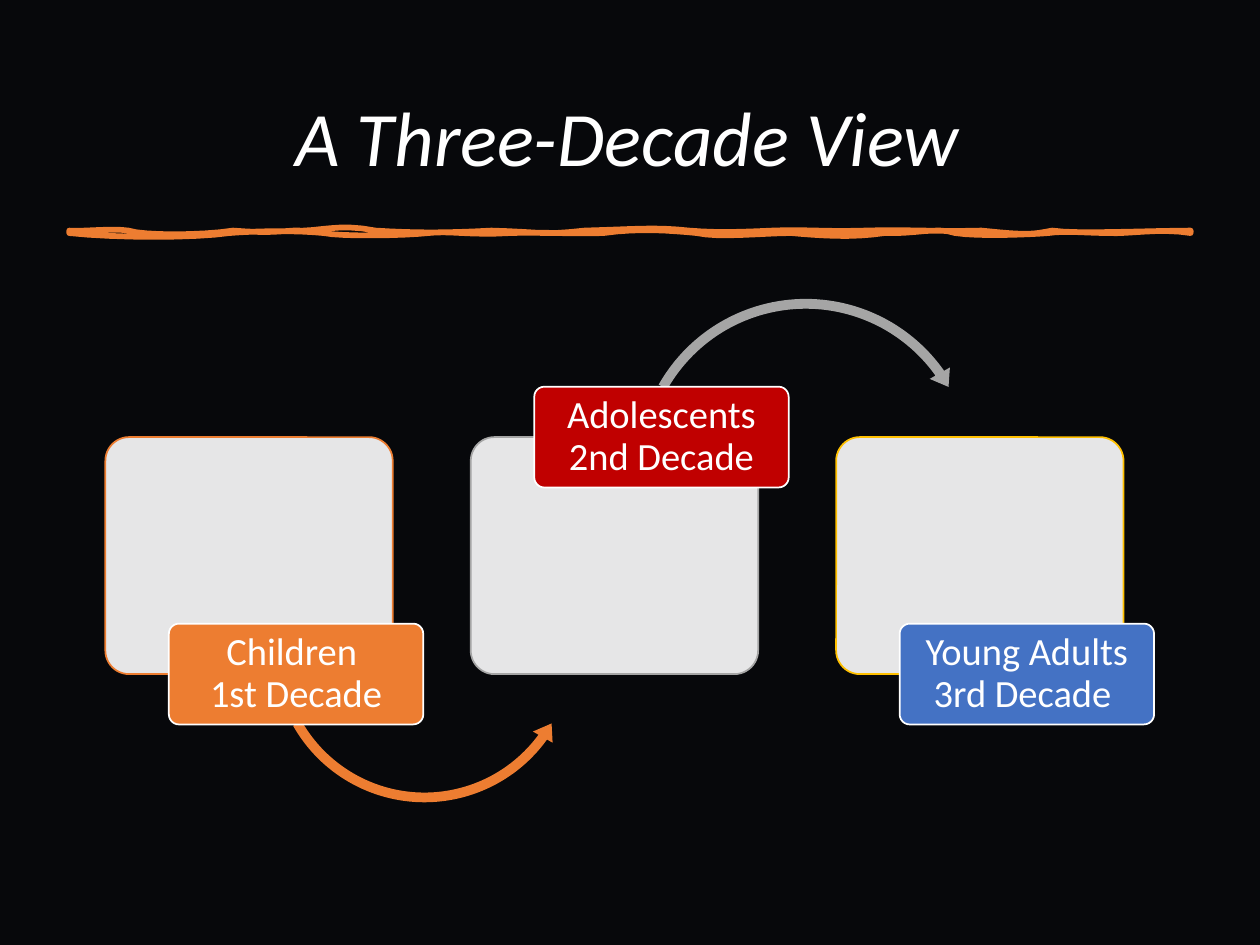
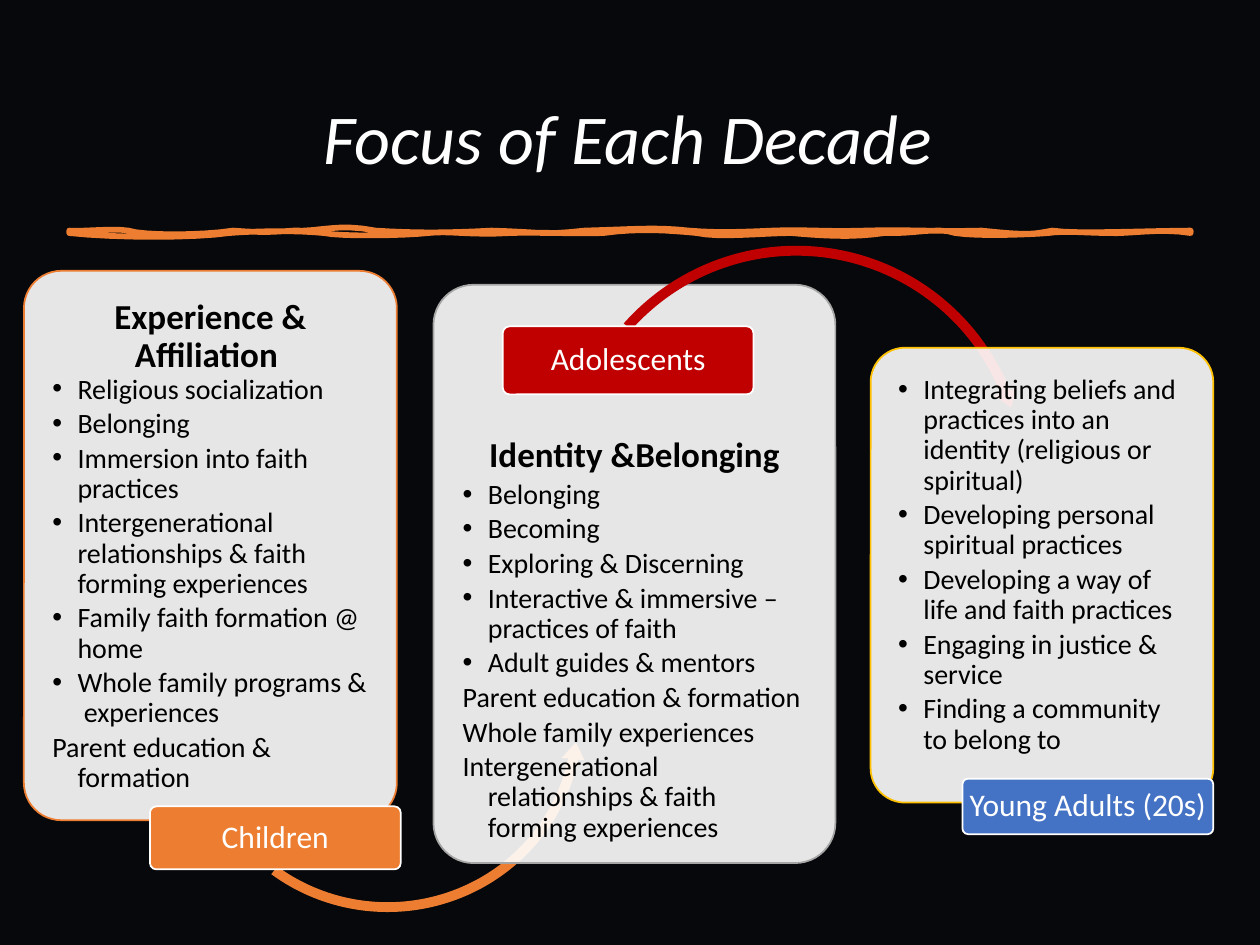
from lxml import etree
from pptx import Presentation
from pptx.dml.color import RGBColor
from pptx.enum.shapes import MSO_SHAPE
from pptx.enum.text import MSO_ANCHOR, PP_ALIGN
from pptx.oxml.ns import qn
from pptx.util import Pt

ROUNDED = MSO_SHAPE.ROUNDED_RECTANGLE
ARROW_OVER = MSO_SHAPE.CIRCULAR_ARROW
ARROW_UNDER = MSO_SHAPE.LEFT_CIRCULAR_ARROW
LEFT, CENTER = PP_ALIGN.LEFT, PP_ALIGN.CENTER
TOP, MIDDLE = MSO_ANCHOR.TOP, MSO_ANCHOR.MIDDLE

NIGHT, WHITE, BLACK = "07080B", "FFFFFF", "000000"
ORANGE, GRAY, YELLOW = "ED7D31", "A5A5A5", "FFC000"
RED, BLUE = "C00000", "4472C4"

# Hand-drawn rule: each curve is control x, y, control x, y, end x
RULE_LEFT, RULE_TOP, RULE_BOTTOM = 39.6, 131.8, 133.2
UPPER_EDGE = [
    (46, 132.5, 64, 130.3, 73.4), (82, 134.6, 115, 134.6, 133.2),
    (153.4, 133.2, 155.5, 132.5, 167.8), (183, 132.5, 193, 127.4, 214.6),
    (238.3, 133.2, 253.4, 133.2, 280.8), (310.3, 132.5, 308.2, 134.6, 334.1),
    (362.2, 131, 374.4, 129.6, 393.8), (412.6, 133.2, 423.4, 132.5, 441.4),
    (461.5, 131, 468.7, 132.5, 494.6), (519.1, 131, 533.5, 132.5, 560.9),
    (588.2, 134.6, 589.7, 133.9, 601.2), (615.6, 133.9, 657.4, 131.8, 680.4),
]
LOWER_EDGE = [
    (680.4, 132.5, 680.4, 133.2, 680.4),
    (662.4, 130.3, 644.4, 133.9, 633.6), (621.4, 133.2, 608.4, 131.8, 599),
    (591.8, 133.9, 559.4, 135.4, 545.8), (535, 129.6, 523.4, 133.9, 505.4),
    (486.7, 136.1, 468, 134.6, 452.2), (437, 133.2, 410.4, 136.1, 398.2),
    (383, 131.8, 365.8, 130.3, 344.9), (324, 133.9, 313.2, 132.5, 291.6),
    (269.3, 134.6, 256.3, 131.8, 244.8), (232.6, 134.6, 195.1, 135.4, 185),
    (171.4, 131.8, 148.3, 131.8, 131), (112.3, 136.1, 65.5, 136.1, 39.6),
]


def color(hex_string):
    return RGBColor.from_string(hex_string)


def rule_points(steps=8):
    """Sample the curves of the rule, along the top and back below."""
    points = []
    x, y = RULE_LEFT, RULE_TOP
    for curves, end_y in ((UPPER_EDGE, RULE_TOP), (LOWER_EDGE, RULE_BOTTOM)):
        for x1, y1, x2, y2, end_x in curves:
            for step in range(1, steps + 1):
                t = step / steps
                weights = ((1 - t) ** 3, 3 * t * (1 - t) ** 2,
                           3 * t * t * (1 - t), t ** 3)
                points.append(tuple(
                    Pt(sum(w * v for w, v in zip(weights, values)))
                    for values in ((x, x1, x2, end_x), (y, y1, y2, end_y))))
            x, y = end_x, end_y
    return points


class Deck:
    font = "Calibri"

    def __init__(self):
        self.presentation = Presentation()
        self.presentation.slide_width = Pt(720)
        self.presentation.slide_height = Pt(540)
        self.slide = None

    def new_slide(self, title, size):
        self.slide = self.presentation.slides.add_slide(
            self.presentation.slide_layouts[6])
        background = self.slide.background.fill
        background.solid()
        background.fore_color.rgb = color(NIGHT)
        box = self.slide.shapes.add_textbox(Pt(23.8), Pt(28.8), Pt(669.6), Pt(104.4))
        self.frame(box, MIDDLE, (7.2, 3.6, 7.2, 3.6))
        self.paragraph(box.text_frame.paragraphs[0], title, size, WHITE, italic=True)
        self.rule()

    def frame(self, shape, anchor, insets):
        frame = shape.text_frame
        frame.word_wrap = True
        frame.vertical_anchor = anchor
        (frame.margin_left, frame.margin_top,
         frame.margin_right, frame.margin_bottom) = map(Pt, insets)

    def paragraph(self, paragraph, text, size, ink, align=CENTER, after=0,
                  bold=False, italic=False):
        paragraph.text = text
        paragraph.alignment = align
        paragraph.line_spacing = 0.9
        paragraph.space_after = Pt(after)
        for run in paragraph.runs:
            run.font.name, run.font.size = self.font, Pt(size)
            run.font.bold, run.font.italic = bold, italic
            run.font.color.rgb = color(ink)

    def hang(self, paragraph, bullet):
        properties = paragraph._p.get_or_add_pPr()
        properties.set("marL", str(Pt(14.4)))
        properties.set("indent", str(-Pt(14.4)))
        if bullet:
            etree.SubElement(properties, qn("a:buFont"), typeface="Arial")
            etree.SubElement(properties, qn("a:buChar"), char="•")
        else:
            etree.SubElement(properties, qn("a:buNone"))

    def rule(self):
        builder = self.slide.shapes.build_freeform(Pt(RULE_LEFT), Pt(RULE_TOP))
        builder.add_line_segments(rule_points(), close=True)
        shape = builder.convert_to_shape()
        shape.shadow.inherit = False
        shape.fill.background()
        shape.line.color.rgb = color(ORANGE)
        shape.line.width = Pt(3.25)

    def shape(self, kind, place, fill, line, adjustments):
        shape = self.slide.shapes.add_shape(kind, *map(Pt, place))
        shape.shadow.inherit = False
        for index, value in enumerate(adjustments):
            shape.adjustments[index] = value
        shape.fill.solid()
        shape.fill.fore_color.rgb = color(fill)
        if line:
            shape.line.color.rgb = color(line)
            shape.line.width = Pt(1)
        else:
            shape.line.fill.background()
        return shape

    def card(self, place, line, heading=None, bullets=(), plain=(), lead=0,
             heading_after=0):
        card = self.shape(ROUNDED, place, WHITE, line, [0.1])
        fill = card._element.spPr.find(qn("a:solidFill"))
        etree.SubElement(fill[0], qn("a:alpha"), val="90000")
        self.frame(card, TOP, (10, 10 + lead, 10, 10))
        items = [(text, True) for text in bullets] + [(text, False) for text in plain]
        frame = card.text_frame
        paragraph = frame.paragraphs[0]
        if heading:
            self.paragraph(paragraph, heading, 20, BLACK, after=heading_after, bold=True)
        for index, (text, bullet) in enumerate(items):
            if heading or index:
                paragraph = frame.add_paragraph()
            self.paragraph(paragraph, text, 16, BLACK, LEFT, after=2.5)
            self.hang(paragraph, bullet)

    def arrow(self, kind, place, fill, adjustments):
        self.shape(kind, place, fill, None, adjustments)

    def label(self, place, text, fill, size, inset):
        label = self.shape(ROUNDED, place, fill, WHITE, [0.1])
        self.frame(label, MIDDLE, (inset, 2, inset, 2))
        self.paragraph(label.text_frame.paragraphs[0], text, size, WHITE)

    def save(self):
        self.presentation.save("out.pptx")


def three_decade_view(deck):
    deck.new_slide("A Three-Decade View", 44)
    card_top, card_width, card_height = 249.8, 164.2, 135.4
    label_width, label_height = 145.4, 57.6
    card_bottom = card_top + card_height
    under = (ARROW_UNDER, (152.6, 282.2, 180, 180), ORANGE,
             (0.031, 3.831, 21.586, 90.245, 0.036))
    over = (ARROW_OVER, (360, 167, 200.9, 200.9), GRAY,
            (0.028, 3.406, 194.839, 125.755, 0.033))
    decades = [
        ("Children \n1st Decade", ORANGE, ORANGE, card_bottom, under),
        ("Adolescents 2nd Decade", GRAY, RED, card_top, over),
        ("Young Adults 3rd Decade ", YELLOW, BLUE, card_bottom, None),
    ]
    for index, (text, line, fill, edge, arrow) in enumerate(decades):
        left = 60.2 + 208.8 * index
        deck.card((left, card_top, card_width, card_height), line)
        if arrow:
            deck.arrow(*arrow)
        deck.label((left + 36.3, edge - label_height / 2, label_width, label_height),
                   text, fill, 22, 3.6)


def focus_of_each_decade(deck):
    deck.new_slide("Focus of Each Decade", 40)
    label_width = 143.3

    # Children
    deck.card(
        (13.7, 154.8, 213.1, 313.9), ORANGE, "Experience & Affiliation ",
        ["Religious socialization", "Belonging", "Immersion into faith practices",
         "Intergenerational relationships & faith forming experiences",
         "Family faith formation @ home", "Whole family programs &  experiences"],
        ["Parent education & formation"])
    deck.arrow(ARROW_UNDER, (106.6, 299.5, 229.7, 225.4), ORANGE,
               (0.025, 3.043, 6.897, 76.344, 0.029))
    deck.label((85.7, 460.8, label_width, 36), "Children", ORANGE, 18, 2.5)

    # Adolescents
    deck.card(
        (247.7, 162.7, 229.7, 330.5), GRAY, "Identity &Belonging",
        ["Belonging", "Becoming", "Exploring & Discerning",
         "Interactive & immersive – practices of faith", "Adult guides & mentors"],
        ["Parent education & formation", "Whole family experiences",
         "Intergenerational relationships & faith forming experiences"],
        lead=70.4, heading_after=3)
    deck.arrow(ARROW_OVER, (319.7, 136.8, 270.7, 270.7), RED,
               (0.021, 2.508, 202.902, 132.92, 0.024))
    deck.label((287.3, 186.5, label_width, 38.9), "Adolescents", RED, 18, 2.5)

    # Young adults
    deck.card(
        (497.5, 198.7, 195.8, 259.9), YELLOW,
        bullets=[
            "Integrating beliefs and practices into an identity (religious or spiritual)",
            "Developing personal spiritual practices",
            "Developing a way of life and faith practices",
            "Engaging in justice & service", "Finding a community to belong to"])
    deck.label((550, 445, label_width, 31.7), "Young Adults (20s)", BLUE, 18, 2.5)


def main():
    deck = Deck()
    three_decade_view(deck)
    focus_of_each_decade(deck)
    deck.save()


if __name__ == "__main__":
    main()
